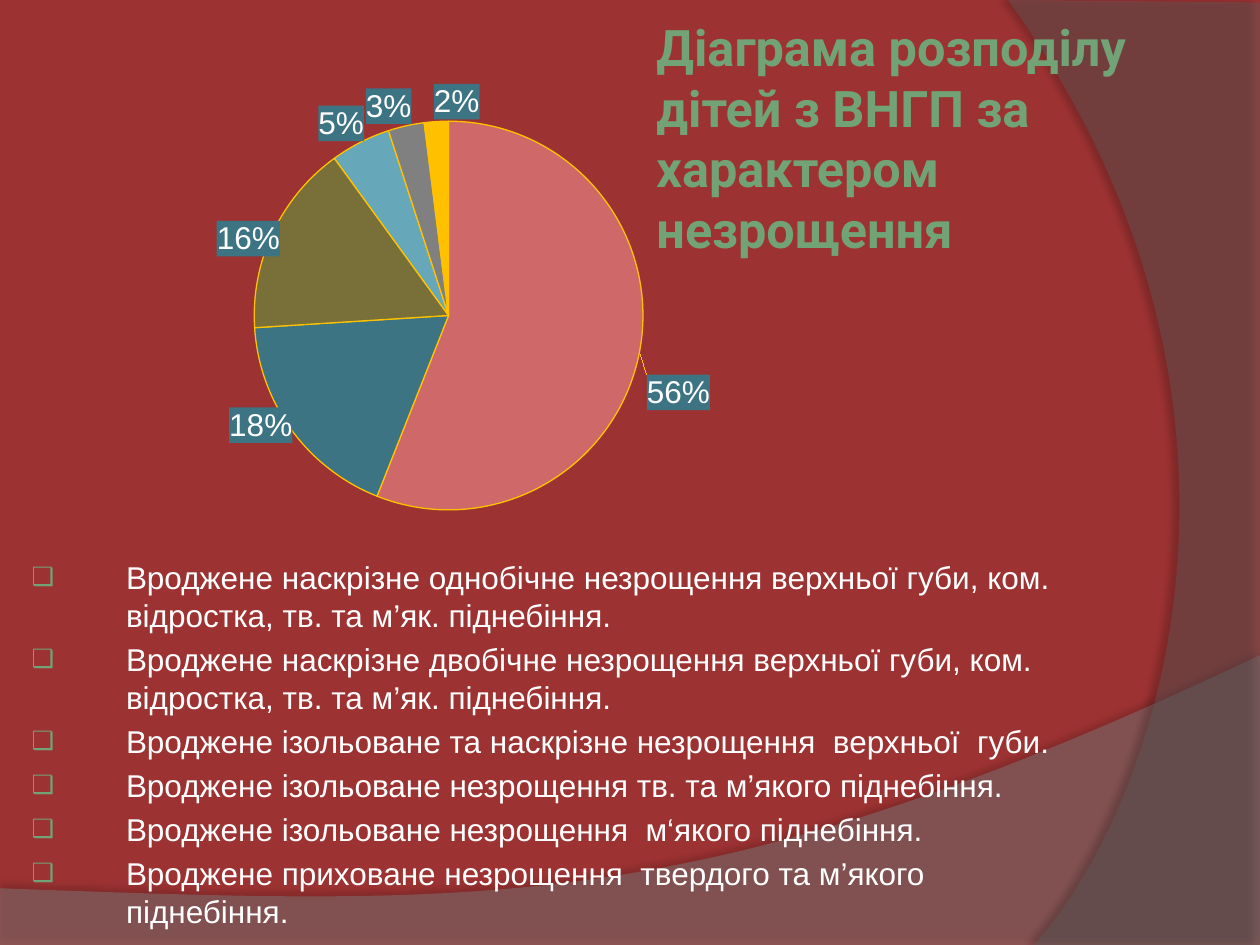
from pptx import Presentation
from pptx.chart.data import CategoryChartData
from pptx.dml.color import RGBColor
from pptx.enum.chart import XL_CHART_TYPE
from pptx.enum.text import MSO_ANCHOR, MSO_AUTO_SIZE, PP_ALIGN
from pptx.oxml import parse_xml
from pptx.oxml.ns import nsdecls, qn
from pptx.util import Inches, Pt

BACKGROUND = RGBColor(0x9D, 0x32, 0x32)
GREEN = RGBColor(0x72, 0xA3, 0x76)
WHITE = RGBColor(0xFF, 0xFF, 0xFF)
TEAL = RGBColor(0x3C, 0x74, 0x83)
GOLD = RGBColor(0xFE, 0xC2, 0x00)
WAVE_GRAY = RGBColor(0x7F, 0x7F, 0x7F)
ARC_GRAY = RGBColor(0x5E, 0x5E, 0x5E)

TITLE = "Діаграма розподілу дітей з ВНГП за характером незрощення"
DIAGNOSES = [
    "Вроджене наскрізне однобічне незрощення верхньої губи, ком. відростка, тв. та м’як. піднебіння.",
    "Вроджене наскрізне двобічне незрощення верхньої губи, ком. відростка, тв. та м’як. піднебіння.",
    "Вроджене ізольоване та наскрізне незрощення  верхньої  губи.",
    "Вроджене ізольоване незрощення тв. та м’якого піднебіння.",
    "Вроджене ізольоване незрощення  м‘якого піднебіння.",
    "Вроджене приховане незрощення  твердого та м’якого піднебіння.",
]
SLICES = [
    (0.56, RGBColor(0xCF, 0x68, 0x68), (0, 0.04)),
    (0.18, TEAL, (0.01, -0.05)),
    (0.16, RGBColor(0x79, 0x6F, 0x39), (0.02, 0.05)),
    (0.05, RGBColor(0x66, 0xA7, 0xB9), (0.01, 0.01)),
    (0.03, RGBColor(0x80, 0x80, 0x80), (0.01, 0.01)),
    (0.02, RGBColor(0xFF, 0xC0, 0x00), (0.03, 0.01)),
]
PLOT = {"x": 0.33, "y": 0.17, "w": 0.56, "h": 0.74}
WAVE_CURVE = [(10, 5.2), (5.59, 7.29), (3.91, 7.19), (0, 7.05)]
ARC_CURVE = [(8.21, 7.5), (9.35, 6.19), (10.18, 3), (8, 0)]
BANDS = [
    {"corners": [(0, 7.51), (10, 7.51)], "curve": WAVE_CURVE, "color": WAVE_GRAY,
     "opacity": 45, "shadow": (35, 3.5, 270)},
    {"corners": [(10, 0.02), (10, 7.5)], "curve": ARC_CURVE, "color": ARC_GRAY,
     "opacity": 40, "shadow": (45, 4, 180)},
]
TITLE_FONT = {"name": "Roboto", "size": Pt(28.8), "bold": True}
TEXT_FONT = {"name": "Arial", "size": Pt(18), "bold": False}
FRAME_FORMAT = {"word_wrap": True, "auto_size": MSO_AUTO_SIZE.NONE,
                **{f"margin_{side}": Inches(0.05) for side in ("left", "top", "right", "bottom")}}


def apply_format(target, values):
    for name, value in values.items():
        setattr(target, name, value)


def format_font(font, values, color):
    apply_format(font, values)
    font.color.rgb = color


def format_line(line):
    line.color.rgb = GOLD
    line.width = Pt(0.75)


def place(shape, left, top, width, height):
    apply_format(shape, {"left": Inches(left), "top": Inches(top),
                         "width": Inches(width), "height": Inches(height)})


def add_band(slide, position, corners, curve, color, opacity, shadow):
    points = [(Inches(x), Inches(y)) for x, y in corners + [curve[0], curve[-1]]]
    builder = slide.shapes.build_freeform(*points[0])
    builder.add_line_segments(points[1:], close=True)
    band = builder.convert_to_shape()
    last_segment = list(band._element.iter(qn("a:lnTo")))[-1]
    controls = "".join(f'<a:pt x="{Inches(x) - band.left}" y="{Inches(y) - band.top}"/>'
                       for x, y in curve[1:])
    last_segment.getparent().replace(last_segment, parse_xml(
        f'<a:cubicBezTo {nsdecls("a")}>{controls}</a:cubicBezTo>'))
    band.fill.solid()
    band.fill.fore_color.rgb = color
    band.line.fill.background()
    fill_color = band._element.spPr.find(qn("a:solidFill"))[0]
    fill_color.append(parse_xml(f'<a:alpha {nsdecls("a")} val="{opacity * 1000}"/>'))
    alpha, distance, direction = shadow
    band._element.spPr.append(parse_xml(
        f'<a:effectLst {nsdecls("a")}><a:outerShdw blurRad="{Pt(4)}" dist="{Pt(distance)}" '
        f'dir="{direction * 60000}" rotWithShape="0"><a:srgbClr val="000000">'
        f'<a:alpha val="{alpha * 1000}"/></a:srgbClr></a:outerShdw></a:effectLst>'))
    slide.shapes._spTree.insert(2 + position, band._element)


def manual_layout(values, prefix=""):
    items = "".join(f'<c:{name} val="{value}"/>' for name, value in values.items())
    return f'<c:layout {nsdecls("c")}><c:manualLayout>{prefix}{items}</c:manualLayout></c:layout>'


def slice_label(index, offset):
    flags = "".join(f'<c:show{name} val="{int(name == "Val")}"/>' for name in
                    ("LegendKey", "Val", "CatName", "SerName", "Percent", "BubbleSize"))
    return parse_xml(
        f'<c:dLbl {nsdecls("c", "a")}><c:idx val="{index}"/>'
        f'{manual_layout(dict(zip("xy", offset)))}'
        f'<c:numFmt formatCode="0%" sourceLinked="0"/>'
        f'<c:spPr><a:solidFill><a:srgbClr val="{TEAL}"/></a:solidFill></c:spPr>'
        f'<c:txPr><a:bodyPr/><a:p><a:pPr><a:defRPr sz="1800" b="0"><a:solidFill>'
        f'<a:srgbClr val="{WHITE}"/></a:solidFill><a:latin typeface="Arial"/></a:defRPr></a:pPr>'
        f'<a:endParaRPr lang="uk-UA"/></a:p></c:txPr><c:dLblPos val="outEnd"/>{flags}</c:dLbl>')


def add_pie(slide):
    data = CategoryChartData(number_format="0%")
    data.categories = [str(number) for number in range(1, len(SLICES) + 1)]
    data.add_series("Series 1", [value for value, _, _ in SLICES])
    chart = slide.shapes.add_chart(XL_CHART_TYPE.PIE, Inches(0.2), Inches(0.21),
                                   Inches(5.51), Inches(4.25), data).chart
    apply_format(chart, {"has_legend": False, "has_title": False})
    format_font(chart.font, TEXT_FONT, WHITE)
    plot_area = chart._chartSpace.chart.plotArea
    for layout in plot_area.findall(qn("c:layout")):
        plot_area.remove(layout)
    prefix = '<c:layoutTarget val="inner"/><c:xMode val="edge"/><c:yMode val="edge"/>'
    plot_area.insert(0, parse_xml(manual_layout(PLOT, prefix)))
    series = chart.plots[0].series[0]
    format_line(series.format.line)
    labels = series.data_labels
    apply_format(labels, {"show_value": True, "number_format": "0%", "number_format_is_linked": False})
    for index, (_, color, offset) in enumerate(SLICES):
        point = series.points[index]
        point.format.fill.solid()
        point.format.fill.fore_color.rgb = color
        format_line(point.format.line)
        labels._element.insert(index, slice_label(index, offset))


def add_title(slide):
    title = slide.shapes.title
    place(title, 5.16, 0.13, 4.72, 1.97)
    title.text_frame.text = TITLE
    apply_format(title.text_frame, {**FRAME_FORMAT, "vertical_anchor": MSO_ANCHOR.BOTTOM})
    paragraph = title.text_frame.paragraphs[0]
    paragraph.alignment = PP_ALIGN.LEFT
    format_font(paragraph.runs[0].font, TITLE_FONT, GREEN)


def add_diagnoses(slide):
    body = slide.placeholders[1]
    place(body, 0.2, 4.38, 8.43, 3.12)
    frame = body.text_frame
    frame.text = "\n".join(DIAGNOSES)
    apply_format(frame, {**FRAME_FORMAT, "vertical_anchor": MSO_ANCHOR.TOP})
    for index, paragraph in enumerate(frame.paragraphs):
        paragraph.space_before = Pt(3.6 if index else 0)
        properties = paragraph._p.get_or_add_pPr()
        properties.set("marL", str(Inches(0.75)))
        properties.set("indent", str(-Inches(0.75)))
        for bullet in (f'<a:buClr {nsdecls("a")}><a:srgbClr val="{GREEN}"/></a:buClr>',
                       f'<a:buSzPct {nsdecls("a")} val="80000"/>',
                       f'<a:buChar {nsdecls("a")} char="❑"/>'):
            properties.append(parse_xml(bullet))
        format_font(paragraph.runs[0].font, TEXT_FONT, WHITE)
    slide.shapes._spTree.append(body._element)


def main():
    presentation = Presentation()
    apply_format(presentation, {"slide_width": Inches(10), "slide_height": Inches(7.5)})
    slide = presentation.slides.add_slide(presentation.slide_layouts[1])
    slide.background.fill.solid()
    slide.background.fill.fore_color.rgb = BACKGROUND
    for position, band in enumerate(BANDS):
        add_band(slide, position, **band)
    add_title(slide)
    add_pie(slide)
    add_diagnoses(slide)
    presentation.save("out.pptx")


if __name__ == "__main__":
    main()
